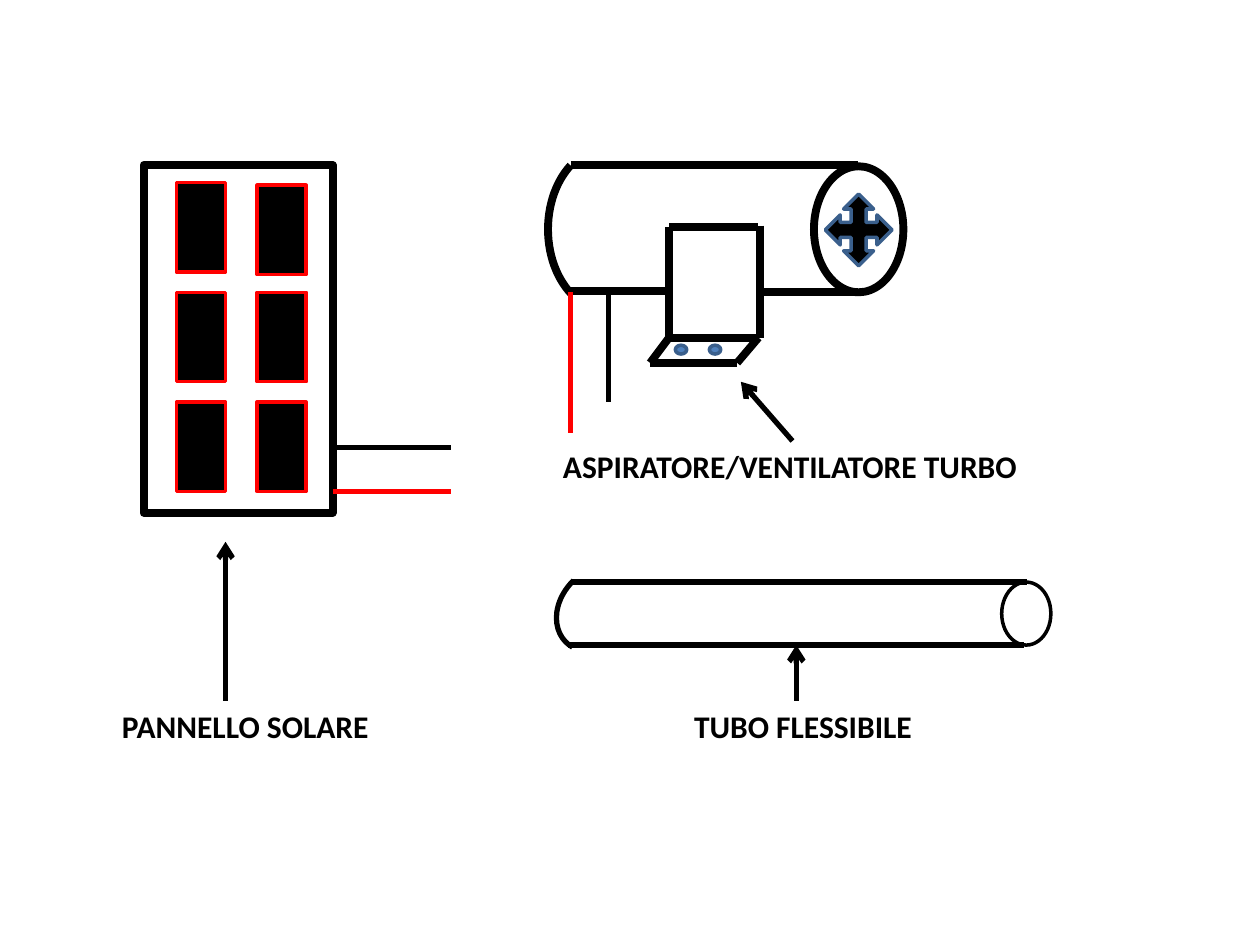
from lxml.etree import SubElement
from pptx import Presentation
from pptx.dml.color import RGBColor
from pptx.enum.shapes import MSO_CONNECTOR, MSO_SHAPE
from pptx.enum.text import MSO_AUTO_SIZE
from pptx.oxml.ns import qn
from pptx.util import Inches, Pt

COLORS = {"black": "000000", "red": "FF0000", "blue": "4F81BD", "navy": "3A5F8C"}


def color(name):
    return RGBColor.from_string(COLORS[name])


def add_outlined(kind, left, top, width, height, line, weight, fill=None):
    shape = slide.shapes.add_shape(
        kind, Inches(left), Inches(top), Inches(width), Inches(height))
    shape.shadow.inherit = False
    if fill:
        shape.fill.solid()
        shape.fill.fore_color.rgb = color(fill)
    else:
        shape.fill.background()
    shape.line.color.rgb = color(line)
    shape.line.width = Pt(weight)
    return shape


presentation = Presentation()
presentation.slide_width = Inches(10)
presentation.slide_height = Inches(7.5)
slide = presentation.slides.add_slide(presentation.slide_layouts[6])

# Solar panel with two columns of cells
add_outlined(MSO_SHAPE.RECTANGLE, 1.14, 1.31, 1.5, 2.76, "black", 4.5)
for left, tops in ((1.4, (1.45, 2.32, 3.19)), (2.04, (1.47, 2.32, 3.19))):
    for top in tops:
        add_outlined(MSO_SHAPE.RECTANGLE, left, top, 0.39, 0.71, "red", 2, "black")

# Fan: open end, front, blades and switch lamps
fan_end = add_outlined(MSO_SHAPE.ARC, 4.35, 1.17, 0.96, 1.3, "black", 4.5)
fan_end.adjustments[0], fan_end.adjustments[1] = 180.427, 35.708
fan_end._element.spPr.xfrm.set("flipH", "1")
add_outlined(MSO_SHAPE.OVAL, 6.46, 1.32, 0.71, 1, "black", 4.5)
add_outlined(MSO_SHAPE.QUAD_ARROW, 6.55, 1.54, 0.53, 0.57, "navy", 2, "black")
for left in (5.36, 5.63):
    add_outlined(MSO_SHAPE.FLOWCHART_CONNECTOR, left, 2.74, 0.09, 0.07, "navy", 2, "blue")

# Flexible tube ends
add_outlined(MSO_SHAPE.OVAL, 7.95, 4.62, 0.39, 0.5, "black", 2)
tube_end = add_outlined(MSO_SHAPE.ARC, 4.46, 4.44, 0.61, 0.77, "black", 3)
tube_end.adjustments[0], tube_end.adjustments[1] = 155.712, 0
tube_end.rotation = 225.9

# Lines grouped by color, weight and arrowhead: x1, y1, x2, y2
line_groups = (
    ("black", 4.5, False, (
        (4.53, 1.31, 6.81, 1.31),  # fan body
        (4.53, 2.31, 5.31, 2.31),
        (6.02, 2.32, 6.81, 2.32),
        (5.31, 1.8, 6.02, 1.8),  # control box
        (5.31, 1.8, 5.31, 2.68),
        (6.03, 1.79, 6.03, 2.68),
        (5.31, 2.68, 6.02, 2.68),
        (5.31, 2.68, 5.16, 2.88),  # control base
        (6.02, 2.68, 5.85, 2.88),
        (5.16, 2.88, 5.85, 2.88),
    )),
    ("black", 3, False, (
        (2.64, 3.55, 3.58, 3.55),  # wires
        (4.83, 2.31, 4.83, 3.19),
        (4.53, 4.62, 8.15, 4.62),  # tube
        (4.51, 5.12, 8.13, 5.12),
    )),
    ("red", 3, False, (
        (2.64, 3.9, 3.58, 3.9),
        (4.53, 2.32, 4.53, 3.44),
    )),
    ("black", 3, True, (
        (1.79, 5.56, 1.79, 4.3),
        (6.29, 3.5, 5.88, 3.03),
        (6.32, 5.56, 6.32, 5.12),
    )),
)
for line_color, weight, has_arrow, lines in line_groups:
    for points in lines:
        connector = slide.shapes.add_connector(
            MSO_CONNECTOR.STRAIGHT, *(Inches(value) for value in points))
        connector.line.color.rgb = color(line_color)
        connector.line.width = Pt(weight)
        if has_arrow:
            SubElement(connector.line._get_or_add_ln(), qn("a:tailEnd"), type="arrow")
        SubElement(connector._element.spPr, qn("a:effectLst"))

# Labels
label_format = {"name": "Calibri", "size": Pt(18), "bold": True}
for text, left, top, width in (
    ("PANNELLO SOLARE", 0.87, 5.56, 2.24),
    ("ASPIRATORE/VENTILATORE TURBO", 4.37, 3.5, 3.83),
    ("TUBO FLESSIBILE", 5.41, 5.56, 1.95),
):
    label = slide.shapes.add_textbox(Inches(left), Inches(top), Inches(width), Inches(0.4))
    label.text_frame.word_wrap = False
    label.text_frame.auto_size = MSO_AUTO_SIZE.SHAPE_TO_FIT_TEXT
    run = label.text_frame.paragraphs[0].add_run()
    run.text = text
    for attribute, value in label_format.items():
        setattr(run.font, attribute, value)
    run.font.color.rgb = color("black")

presentation.save("out.pptx")
